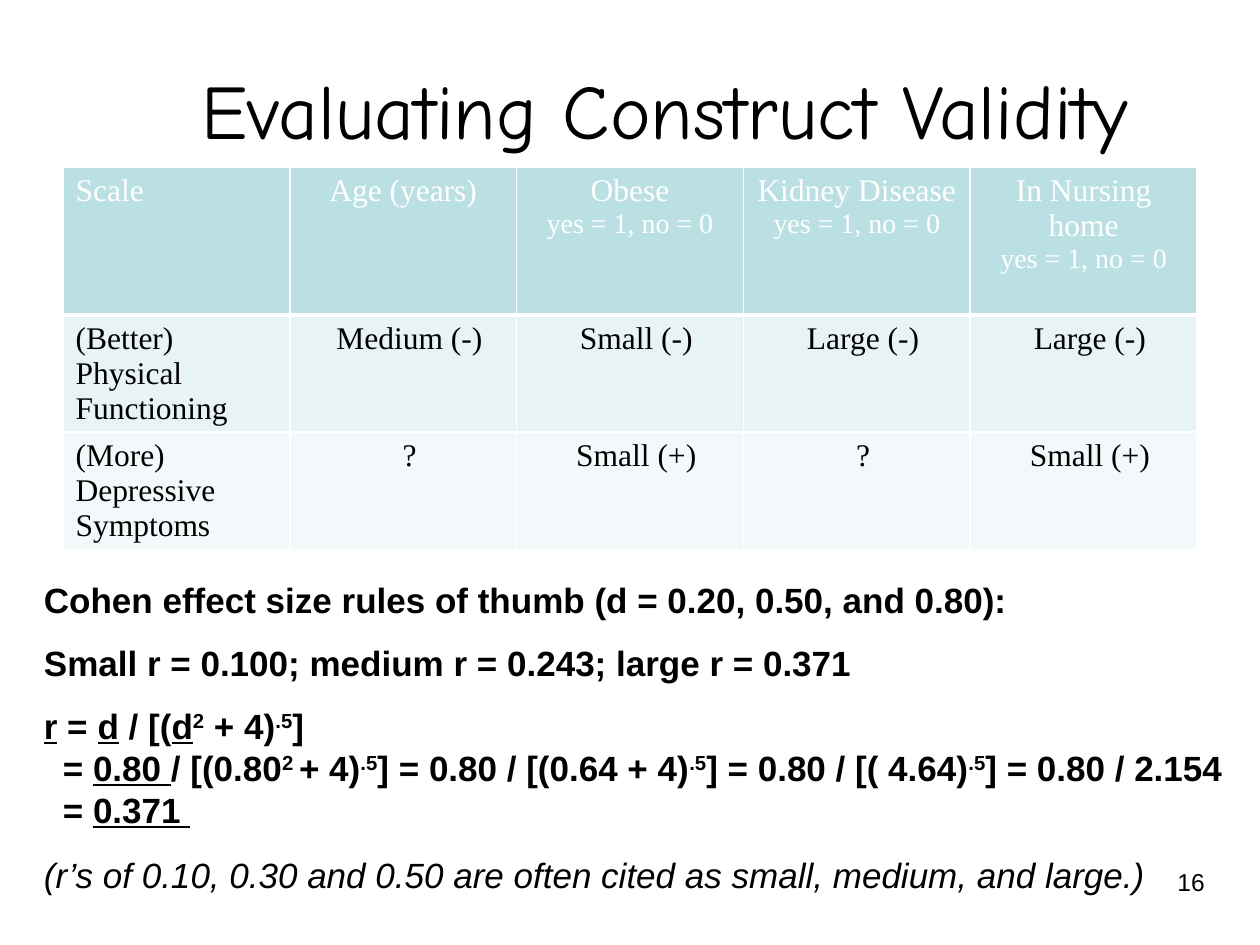
import pptx
import pptx.util
import pptx.dml.color
import pptx.enum.text
import pptx.oxml
import pptx.oxml.ns
from dataclasses import dataclass

Inches, Pt = pptx.util.Inches, pptx.util.Pt
ALIGN = pptx.enum.text.PP_ALIGN
ANCHOR = pptx.enum.text.MSO_ANCHOR


@dataclass(frozen=True)
class Theme:
    title_font: str = "Comic Neue"
    table_font: str = "Times New Roman"
    body_font: str = "Arial"
    ink: str = "000000"
    white: str = "FFFFFF"
    row_fills: tuple = ("BBE0E3", "E7F3F4", "F3F9FA")
    title_size: int = 44
    table_size: int = 18
    coding_size: int = 16
    body_size: int = 20
    number_size: int = 14


THEME = Theme()

TITLE = "Evaluating Construct Validity"
CODING = "yes = 1, no = 0"
# Header cells: a heading, and how the variable is coded (if it is).
HEADERS = [
    ("Scale", None),
    ("Age (years)", None),
    ("Obese", CODING),
    ("Kidney Disease", CODING),
    ("In Nursing home", CODING),
]
EFFECTS = [
    ["(Better) Physical Functioning", "Medium (-)", "Small (-)", "Large (-)", "Large (-)"],
    ["(More) Depressive Symptoms", "?", "Small (+)", "?", "Small (+)"],
]
# Note paragraphs: space before (pt), indent (in), pieces as (text, style).
NOTES = [
    (0, 0, [("Cohen effect size rules of thumb (d = 0.20, 0.50, and 0.80):", "")]),
    (12, 0, [("Small r = 0.100; medium r = 0.243; large r = 0.371", "")]),
    (12, 0, [("r", "under"), (" = ", ""), ("d", "under"), (" / [(", ""), ("d", "under"),
             ("2", "super"), (" + 4)", ""), (".5", "super"), ("]", "")]),
    (0, 0.15, [("= ", ""), ("0.80 ", "under"), ("/ [(0.80", ""), ("2 ", "super"),
               ("+ 4)", ""), (".5", "super"), ("] = 0.80 / [(0.64 + 4)", ""),
               (".5", "super"), ("] = 0.80 / [( 4.64)", ""), (".5", "super"),
               ("] = 0.80 / 2.154", "")]),
    (0, 0.15, [("= ", ""), ("0.371 ", "under")]),
    (13, 0, [("(r’s of 0.10, 0.30 and 0.50 are often cited as small, medium, and large.)",
              "italic")]),
]
SLIDE_NUMBER = "16"

TITLE_BOX = (0.56, 0.17, 9.44, 1.38)
TABLE_BOX = (0.5, 1.33, 9, 3.03)
NOTES_BOX = (0.25, 4.54, 9.75, 2.63)
NUMBER_BOX = (8.06, 6.83, 1.6, 0.52)
ROW_HEIGHTS = (1.17, 0.93, 0.93)
VALUE_MARGIN = 0.2


def inches(box):
    return [Inches(length) for length in box]


def style_run(run, font, size, color=THEME.ink, bold=False):
    run.font.name = font
    run.font.size = Pt(size)
    run.font.bold = bold
    run.font.color.rgb = pptx.dml.color.RGBColor.from_string(color)


def add_borders(cell, bottom_width):
    properties = cell._tc.get_or_add_tcPr()
    for side, width in (("L", 1), ("R", 1), ("T", 1), ("B", bottom_width)):
        properties.append(pptx.oxml.parse_xml(
            f'<a:ln{side} {pptx.oxml.ns.nsdecls("a")} w="{Pt(width)}"><a:solidFill>'
            f'<a:srgbClr val="{THEME.white}"/></a:solidFill></a:ln{side}>'))


def add_title(slide):
    title = slide.shapes.title
    title.left, title.top, title.width, title.height = inches(TITLE_BOX)
    title.text_frame.text = TITLE
    title.text_frame.vertical_anchor = ANCHOR.MIDDLE
    paragraph = title.text_frame.paragraphs[0]
    paragraph.alignment = ALIGN.CENTER
    style_run(paragraph.runs[0], THEME.title_font, THEME.title_size)


def add_effect_table(slide):
    headings = ["\v".join(filter(None, header)) for header in HEADERS]
    rows = [headings] + EFFECTS
    table = slide.shapes.add_table(len(rows), len(headings), *inches(TABLE_BOX)).table
    for column in table.columns:
        column.width = Inches(TABLE_BOX[2] / len(headings))
    for r, texts in enumerate(rows):
        table.rows[r].height = Inches(ROW_HEIGHTS[r])
        is_header = r == 0
        for c, text in enumerate(texts):
            cell = table.cell(r, c)
            add_borders(cell, 3 if is_header else 1)
            cell.fill.solid()
            cell.fill.fore_color.rgb = pptx.dml.color.RGBColor.from_string(THEME.row_fills[r])
            if c and not is_header:
                cell.margin_left = Inches(VALUE_MARGIN)
            paragraph = cell.text_frame.paragraphs[0]
            paragraph.text = text
            paragraph.alignment = ALIGN.CENTER if c else ALIGN.LEFT
            for run, size in zip(paragraph.runs, (THEME.table_size, THEME.coding_size)):
                style_run(run, THEME.table_font, size,
                          THEME.white if is_header else THEME.ink)


def add_notes(slide):
    frame = slide.shapes.add_textbox(*inches(NOTES_BOX)).text_frame
    frame.word_wrap = True
    for i, (space, indent, pieces) in enumerate(NOTES):
        paragraph = frame.add_paragraph() if i else frame.paragraphs[0]
        paragraph.space_before = Pt(space)
        paragraph._p.get_or_add_pPr().set("marL", str(Inches(indent)))
        for text, style in pieces:
            run = paragraph.add_run()
            run.text = text
            style_run(run, THEME.body_font, THEME.body_size, bold=style != "italic")
            run.font.italic = style == "italic"
            run.font.underline = style == "under"
            if style == "super":
                run.font._element.set("baseline", "30000")


def add_slide_number(slide):
    frame = slide.shapes.add_textbox(*inches(NUMBER_BOX)).text_frame
    frame.word_wrap = True
    frame.text = SLIDE_NUMBER
    frame.paragraphs[0].alignment = ALIGN.RIGHT
    style_run(frame.paragraphs[0].runs[0], THEME.body_font, THEME.number_size)


def main():
    deck = pptx.Presentation()
    deck.slide_width, deck.slide_height = Inches(10), Inches(7.5)
    slide = deck.slides.add_slide(deck.slide_layouts.get_by_name("Title Only"))
    add_title(slide)
    add_effect_table(slide)
    add_notes(slide)
    add_slide_number(slide)
    deck.save("out.pptx")


if __name__ == "__main__":
    main()
